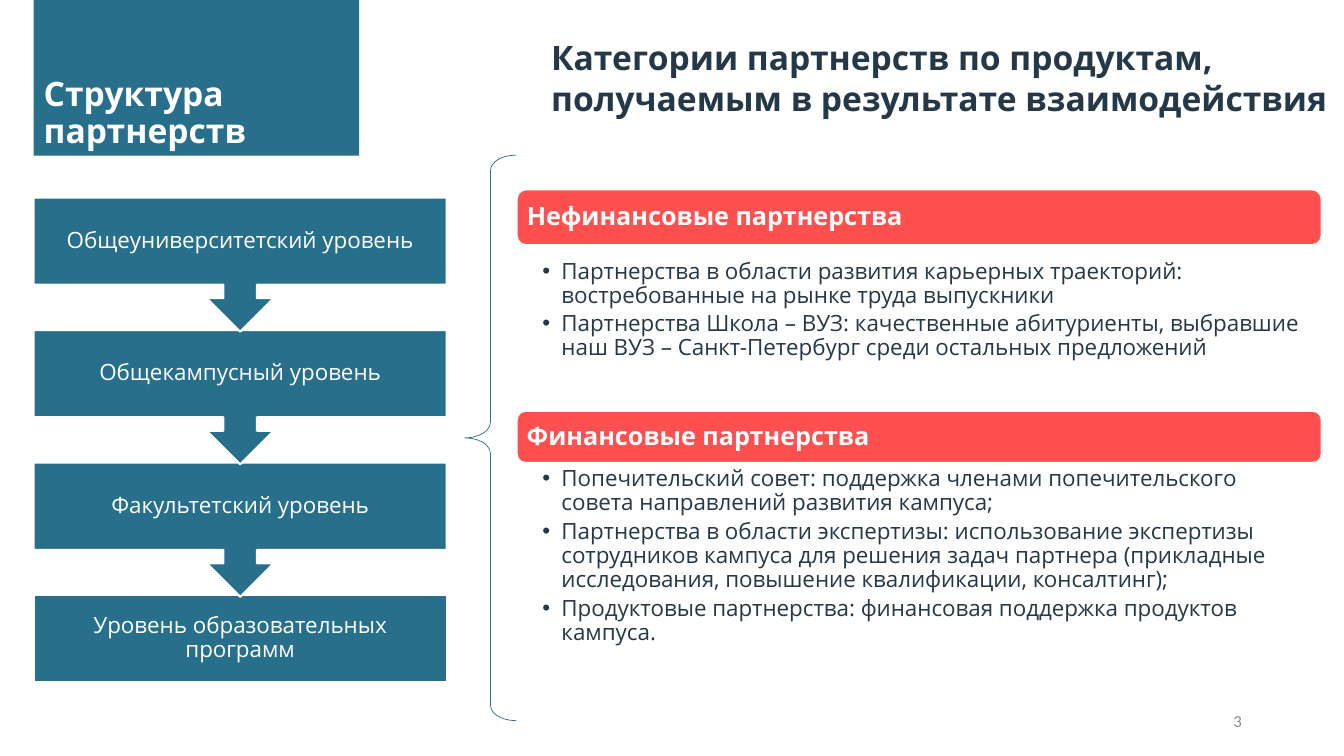
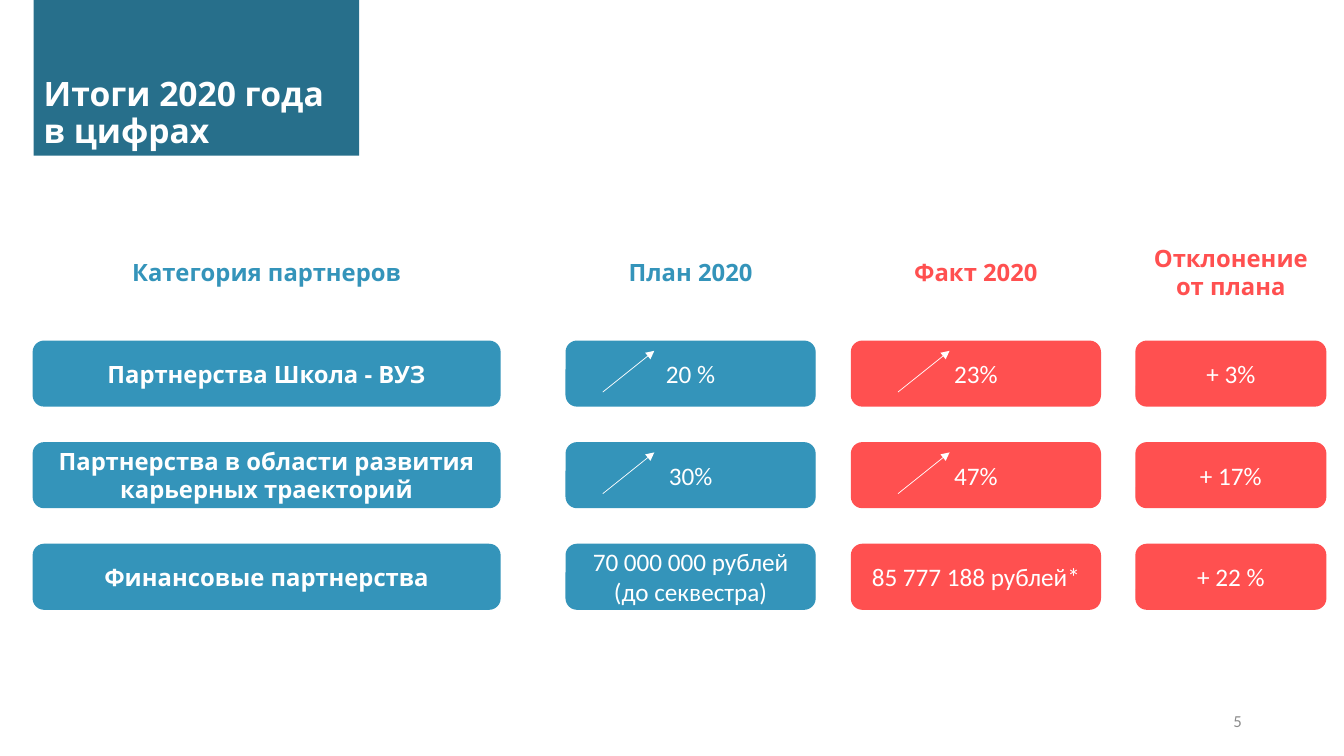
from lxml import etree
from pptx import Presentation
from pptx.dml.color import RGBColor
from pptx.enum.shapes import MSO_CONNECTOR, MSO_SHAPE
from pptx.enum.text import MSO_ANCHOR, MSO_AUTO_SIZE, PP_ALIGN
from pptx.oxml.ns import qn
from pptx.util import Cm, Pt

RECT, ROUND = MSO_SHAPE.RECTANGLE, MSO_SHAPE.ROUNDED_RECTANGLE
CALLOUT, BRACE = MSO_SHAPE.DOWN_ARROW_CALLOUT, MSO_SHAPE.LEFT_BRACE
LINE = MSO_CONNECTOR.STRAIGHT
TOP, MIDDLE, BOTTOM = MSO_ANCHOR.TOP, MSO_ANCHOR.MIDDLE, MSO_ANCHOR.BOTTOM
LEFT, CENTER, RIGHT = PP_ALIGN.LEFT, PP_ALIGN.CENTER, PP_ALIGN.RIGHT
FIXED = MSO_AUTO_SIZE.NONE

TEAL, BLUE, RED = "276F8B", "3494BA", "FF5050"
WHITE, DARK, GRAY = "FFFFFF", "253848", "8C8C8C"
SANS, PLAIN = "Open Sans", "Calibri"
PAD = (0.25, 0.13, 0.25, 0.13)
TITLE_ONLY, TWO_LISTS = 5, 3


def rgb(code):
    return RGBColor.from_string(code)


class Deck:
    """Holds the shared style and the current slide."""

    def __init__(self):
        self.show = Presentation()
        self.show.slide_width, self.show.slide_height = Cm(33.87), Cm(19.05)
        self.slide = None

    def page(self, layout, title, number):
        """Start a slide with its title band and page number."""
        self.slide = self.show.slides.add_slide(self.show.slide_layouts[layout])
        band = self.slide.shapes.title
        self.place(band, 0.85, 0, 8.2, 3.92)
        band.fill.solid()
        band.fill.fore_color.rgb = rgb(TEAL)
        self.text(band, title, 24, WHITE, bold=True, anchor=BOTTOM, space=0.9)
        self.label(number, 23.93, 17.66, 7.62, 1, 12, GRAY,
                   font=PLAIN, align=RIGHT, anchor=MIDDLE)

    def place(self, item, x, y, w, h):
        item.left, item.top, item.width, item.height = Cm(x), Cm(y), Cm(w), Cm(h)

    def text(self, item, words, size, color, font=SANS, bold=False,
             align=LEFT, anchor=MIDDLE, space=1.0, after=0, pad=PAD):
        """Fill a shape with text in one format."""
        frame = item.text_frame
        frame.text = words
        frame.word_wrap, frame.auto_size = True, FIXED
        frame.vertical_anchor = anchor
        (frame.margin_left, frame.margin_top,
         frame.margin_right, frame.margin_bottom) = map(Cm, pad)
        for par in frame.paragraphs:
            par.alignment, par.line_spacing = align, space
            par.space_before, par.space_after = Pt(0), Pt(after)
            for run in par.runs:
                run.font.name, run.font.size = font, Pt(size)
                run.font.bold, run.font.color.rgb = bold, rgb(color)

    def label(self, words, x, y, w, h, size, color, **look):
        box = self.slide.shapes.add_textbox(Cm(x), Cm(y), Cm(w), Cm(h))
        self.text(box, words, size, color, **look)

    def shape(self, kind, x, y, w, h, fill=None, line=WHITE, width=1):
        item = self.slide.shapes.add_shape(kind, Cm(x), Cm(y), Cm(w), Cm(h))
        item.shadow.inherit = False
        if fill:
            item.fill.solid()
            item.fill.fore_color.rgb = rgb(fill)
        else:
            item.fill.background()
        item.line.color.rgb, item.line.width = rgb(line), Pt(width)
        return item

    def bullets(self, index, lines, x, y, w, h):
        """Put a bulleted list in a body placeholder."""
        body = self.slide.placeholders[index]
        self.place(body, x, y, w, h)
        self.text(body, "\n".join(lines), 16, DARK, anchor=TOP, space=0.9,
                  after=3, pad=(0.64, 0.05, 0.3, 0.05))
        for par in body.text_frame.paragraphs:
            props = par._p.get_or_add_pPr()
            props.set("marL", str(Cm(0.48)))
            props.set("indent", str(-Cm(0.48)))

    def arrow(self, x1, y1, x2, y2):
        item = self.slide.shapes.add_connector(LINE, Cm(x1), Cm(y1), Cm(x2), Cm(y2))
        item.line.color.rgb, item.line.width = rgb(WHITE), Pt(0.5)
        etree.SubElement(item.line._get_or_add_ln(), qn("a:tailEnd"), type="triangle")
        etree.SubElement(item._element.spPr, qn("a:effectLst"))


def scheme(deck):
    """Partnership levels on the left, categories on the right."""
    deck.page(TWO_LISTS, "Структура партнерств", "3")
    deck.label("Категории партнерств по продуктам, получаемым в результате взаимодействия",
               13.64, 0.81, 20.25, 2.31, 24, DARK, bold=True, anchor=TOP)

    # Categories with their lists
    groups = [
        ("Нефинансовые партнерства", 4.78, 1.39, 6.5, 3.94, [
            "Партнерства в области развития карьерных траекторий: "
            "востребованные на рынке труда выпускники",
            "Партнерства Школа – ВУЗ: качественные абитуриенты, выбравшие "
            "наш ВУЗ – Санкт-Петербург среди остальных предложений"]),
        ("Финансовые партнерства", 10.36, 1.3, 11.73, 5.33, [
            "Попечительский совет: поддержка членами попечительского "
            "совета направлений развития кампуса;",
            "Партнерства в области экспертизы: использование экспертизы "
            "сотрудников кампуса для решения задач партнера (прикладные "
            "исследования, повышение квалификации, консалтинг);",
            "Продуктовые партнерства: финансовая поддержка продуктов кампуса."]),
    ]
    for index, (name, y, h, top, tall, lines) in enumerate(groups, 1):
        head = deck.shape(ROUND, 13.03, y, 20.27, h, RED)
        deck.text(head, name, 18, WHITE, bold=True, space=0.9,
                  pad=(0.18, 0.1, 0.18, 0.1))
        deck.bullets(index, lines, 13.03, top, 20.27, tall)

    # Brace between the halves
    brace = deck.shape(BRACE, 11.71, 3.91, 1.3, 14.25, line=TEAL, width=0.5)
    brace.adjustments[0] = 0.3

    # Chain of levels, the lowest at the back
    levels = ["Общеуниверситетский уровень", "Общекампусный уровень",
              "Факультетский уровень", "Уровень образовательных программ"]
    last = len(levels) - 1
    for row in range(last, -1, -1):
        kind, h = (RECT, 2.18) if row == last else (CALLOUT, 3.38)
        step = deck.shape(kind, 0.85, 4.98 + 3.34 * row, 10.41, h, TEAL, width=1.5)
        deck.text(step, levels[row], 16, WHITE, align=CENTER, space=0.9, pad=(0.3,) * 4)


def results(deck):
    """Plan and fact by category."""
    deck.page(TITLE_ONLY, "Итоги 2020 года в цифрах", "5")
    top, pitch = 6.04, 2.56

    # Columns: left, width, colour, arrow offset, head and cells
    cols = [
        (0.84, 11.76, BLUE, None, "Категория партнеров",
         ["Партнерства Школа - ВУЗ",
          "Партнерства в области развития карьерных траекторий",
          "Финансовые партнерства"]),
        (14.27, 6.27, BLUE, 0.92, "План 2020",
         ["20 %", "30%", "70 000 000 рублей\n(до секвестра)"]),
        (21.46, 6.27, RED, 1.17, "Факт 2020", ["23%", "47%", "85 777 188 рублей*"]),
        (28.63, 4.78, RED, None, "Отклонение от плана", ["+ 3%", "+ 17%", "+ 22 %"]),
    ]
    for col, (x, w, color, shift, head, cells) in enumerate(cols):
        for row, words in enumerate([head] + cells):
            y = top + pitch * row
            fill, ink = (color, WHITE) if row else (WHITE, color)
            bold = row == 0 or col == 0
            font, size = (SANS, 17) if bold else (PLAIN, 18)
            cell = deck.shape(ROUND, x, y, w, 1.63, fill, fill)
            deck.text(cell, words, size, ink, font=font, bold=bold, align=CENTER)
            # Growth arrows in the percentage rows
            if shift and row in (1, 2):
                deck.arrow(x + shift, y + 1.28, x + shift + 1.3, y + 0.24)


def main():
    deck = Deck()
    scheme(deck)
    results(deck)
    deck.show.save("out.pptx")


if __name__ == "__main__":
    main()
